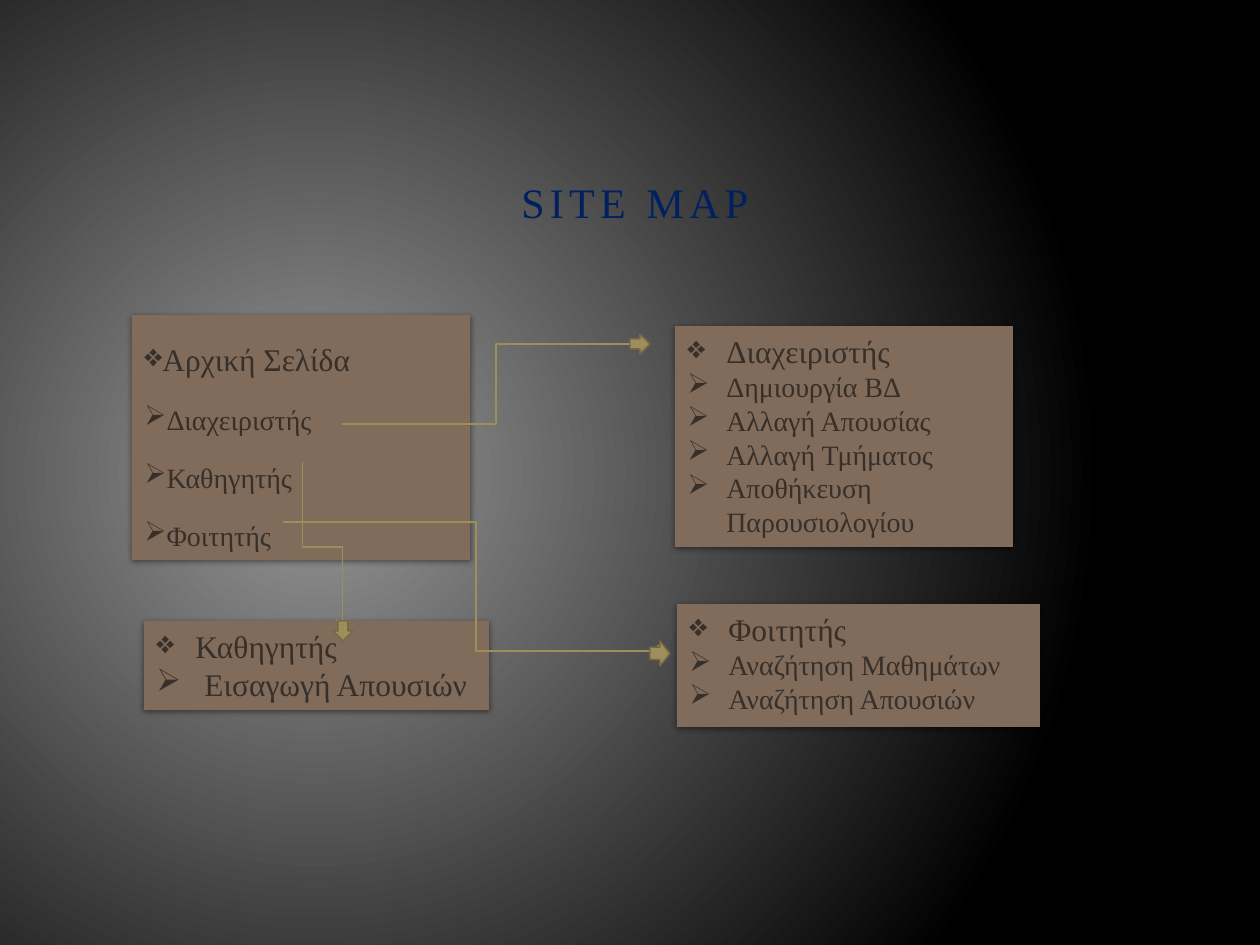
from dataclasses import dataclass

from lxml.etree import SubElement
from pptx import Presentation
from pptx.dml.color import RGBColor
from pptx.enum.shapes import MSO_CONNECTOR as Connector, MSO_SHAPE as Preset
from pptx.enum.text import MSO_ANCHOR as Anchor, MSO_AUTO_SIZE as AutoSize, PP_ALIGN as Align
from pptx.oxml.ns import qn
from pptx.util import Emu, Pt

PX = 914400 // 126  # one pixel in EMU


@dataclass(frozen=True)
class Theme:
    font: str = "Times New Roman"
    title: str = "002060"
    text: str = "37302A"
    panel: str = "816B5A"
    accent: str = "9E8E5C"
    accent_edge: str = "756944"
    glow: str = "979797"
    dark: str = "000000"
    title_size: int = 24
    head_size: int = 18
    item_size: int = 16


THEME = Theme()
HEAD, ITEM = "❖", "➢"


def px(*lengths):
    return [Emu(length * PX) for length in lengths]


def rgb(value):
    return RGBColor.from_string(value)


def set_format(target, values):
    for name, value in values.items():
        setattr(target, name, value)


def add_xml(parent, tag, **attributes):
    return SubElement(parent, qn(tag), {key: str(value) for key, value in attributes.items()})


def paint_background(page):
    """Circular gradient, lightest at the left middle."""
    fill = page.background.fill
    fill.gradient()
    for stop, color in zip(fill.gradient_stops, (THEME.glow, THEME.dark)):
        stop.color.rgb = rgb(color)
    gradient = next(page.element.iter(qn("a:gradFill")))
    gradient.remove(gradient.find(qn("a:lin")))
    circle = add_xml(gradient, "a:path", path="circle")
    add_xml(circle, "a:fillToRect", l=50000, t=100000, r=100000, b=100000)


def write(para, text, size, color):
    span = para.add_run()
    span.text = text
    set_format(span.font, {"name": THEME.font, "size": Pt(size)})
    span.font.color.rgb = rgb(color)
    return span


def add_title(page, text, place):
    box = page.shapes.add_textbox(*px(*place))
    set_format(box.text_frame, {"word_wrap": True, "vertical_anchor": Anchor.BOTTOM})
    para = box.text_frame.paragraphs[0]
    para.alignment = Align.CENTER
    span = write(para, text, THEME.title_size, THEME.title)
    span.font._element.set("spc", "300")


def add_shape(page, preset, place, fill, edge=None):
    shape = page.shapes.add_shape(preset, *px(*place))
    shape.shadow.inherit = False
    shape.fill.solid()
    shape.fill.fore_color.rgb = rgb(fill)
    if edge:
        shape.line.color.rgb = rgb(edge)
        shape.line.width = Pt(0.85)
    else:
        shape.line.fill.background()
    return shape


def add_shadow(shape):
    effects = shape.element.spPr.find(qn("a:effectLst"))
    shadow = add_xml(effects, "a:outerShdw", blurRad=Pt(3.5), dist=Pt(1.1),
                     dir=5400000, rotWithShape=0)
    color = add_xml(shadow, "a:srgbClr", val=THEME.dark)
    add_xml(color, "a:alpha", val=45000)


def add_panel(page, place, lines, frame_format, spaced=False):
    """Brown panel; each line is bullet, text, size, left margin and indent."""
    panel = add_shape(page, Preset.RECTANGLE, place, THEME.panel)
    add_shadow(panel)
    frame = panel.text_frame
    set_format(frame, {"vertical_anchor": Anchor.TOP, **frame_format})
    for index, (bullet, text, size, margin, indent) in enumerate(lines):
        para = frame.add_paragraph() if index else frame.paragraphs[0]
        properties = para._p.get_or_add_pPr()
        properties.set("marL", str(margin * PX))
        properties.set("indent", str(indent * PX))
        add_xml(properties, "a:buChar", char=bullet)
        para.alignment = Align.LEFT
        if spaced:
            para.line_spacing = 1.5
            para.space_before = Pt(4.4 if index else 0)
        write(para, text, size, THEME.text)


def listing(head, items, margin=39, indent=-39):
    """A heading line followed by item lines on one indent."""
    return [(HEAD, head, THEME.head_size, margin, indent)] + [
        (ITEM, item, THEME.item_size, margin, indent) for item in items]


def add_link(page, start, end, rotation=0, head=True):
    link = page.shapes.add_connector(Connector.ELBOW, *px(*start, *end))
    link.line.color.rgb = rgb(THEME.accent)
    link.line.width = Pt(0.75)
    properties = link.element.spPr
    if rotation:
        properties.find(qn("a:xfrm")).set("rot", str(rotation * 60000))
    if head:
        add_xml(properties.find(qn("a:ln")), "a:tailEnd", type="arrow")
    add_xml(properties, "a:effectLst")


def main():
    deck = Presentation()
    deck.slide_width, deck.slide_height = px(1260, 945)
    page = deck.slides.add_slide(deck.slide_layouts[6])
    paint_background(page)
    add_title(page, "SITE MAP", (194, 155, 882, 78))

    # Home page and the pages it leads to
    fixed = {"word_wrap": True}
    growing = {"word_wrap": True, "auto_size": AutoSize.SHAPE_TO_FIT_TEXT}
    unwrapped = {**growing, "word_wrap": False}
    add_panel(page, (132, 315, 338, 245),
              listing("Αρχική Σελίδα", ["Διαχειριστής", "Καθηγητής", "Φοιτητής"], 0, -38),
              fixed, spaced=True)
    add_panel(page, (675, 326, 338, 221),
              listing("Διαχειριστής", ["Δημιουργία ΒΔ", "Αλλαγή Απουσίας",
                                       "Αλλαγή Τμήματος", "Αποθήκευση Παρουσιολογίου"]),
              growing)
    add_link(page, (342, 424), (650, 344), head=False)
    add_panel(page, (144, 621, 345, 89),
              listing("Καθηγητής", []) + [(ITEM, "Εισαγωγή Απουσιών", THEME.head_size, 48, -48)],
              unwrapped)
    add_panel(page, (677, 604, 363, 123),
              listing("Φοιτητής", ["Αναζήτηση Μαθημάτων", "Αναζήτηση Απουσιών"]),
              unwrapped)

    # Links with block arrows at their ends; the turned one runs downwards
    add_link(page, (407, 527), (238, 567), rotation=270)
    add_link(page, (283, 522), (669, 651))
    for preset, place in (
        (Preset.RIGHT_ARROW, (630, 334, 20, 20)),
        (Preset.DOWN_ARROW, (333, 621, 20, 20)),
        (Preset.RIGHT_ARROW, (650, 641, 20, 25)),
    ):
        add_shape(page, preset, place, THEME.accent, THEME.accent_edge)

    deck.save("out.pptx")


if __name__ == "__main__":
    main()
